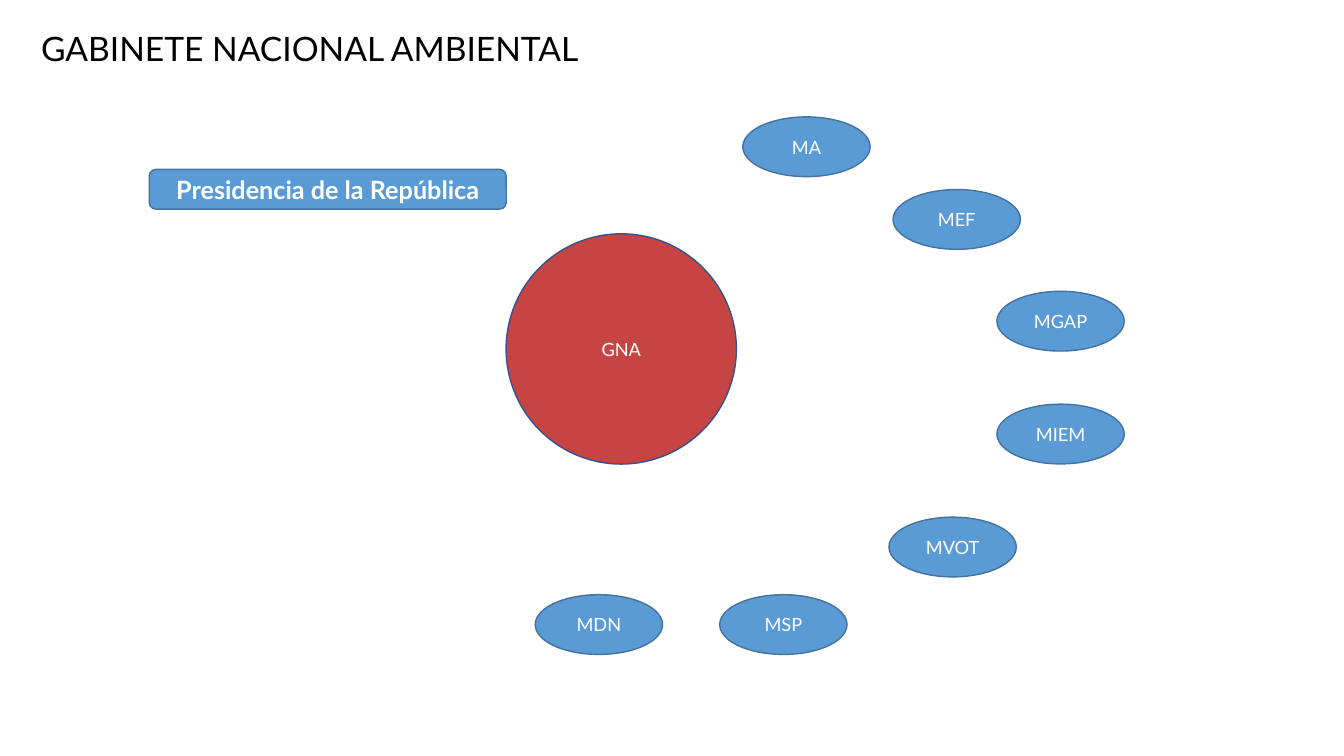
import pptx
import pptx.util
import pptx.dml.color
import pptx.enum.shapes
import pptx.enum.text

Pt = pptx.util.Pt
MSO_SHAPE = pptx.enum.shapes.MSO_SHAPE
PP_ALIGN = pptx.enum.text.PP_ALIGN


def color(target, value):
    target.rgb = pptx.dml.color.RGBColor.from_string(value)


def write(sp, text, size=13, fill="FFFFFF", bold=False, align=PP_ALIGN.CENTER, spacing=1.0):
    tf = sp.text_frame
    tf.word_wrap = True
    tf.vertical_anchor = pptx.enum.text.MSO_ANCHOR.MIDDLE
    p = tf.paragraphs[0]
    p.alignment = align
    p.line_spacing = spacing
    r = p.add_run()
    r.text = text
    r.font.name = "Lato"
    r.font.size = Pt(size)
    r.font.bold = bold
    color(r.font.color, fill)


prs = pptx.Presentation()
prs.slide_width = Pt(960)
prs.slide_height = Pt(540)
s = prs.slides.add_slide(prs.slide_layouts[6])

title = s.shapes.add_textbox(Pt(22.3), Pt(18), Pt(720), Pt(36.7))
write(title, "GABINETE NACIONAL AMBIENTAL", size=24, fill="000000", align=PP_ALIGN.LEFT, spacing=0.9)

ministries = [
    ("MA", 530.6, 83.5),
    ("MEF", 637.9, 135.4),
    ("MGAP", 712.1, 208.1),
    ("MIEM", 712.1, 288.7),
    ("MVOT", 635, 369.4),
    ("MSP", 514.1, 424.8),
    ("MDN", 382.3, 424.8),
]
blue, blue_line = "5B9BD5", "43739E"
nodes = [("GNA", MSO_SHAPE.OVAL, 361.5, 167, 164.5, 164.5, "C64542", "325491", {})]
for name, x, y in ministries:
    nodes.append((name, MSO_SHAPE.OVAL, x, y, 91, 42.7, blue, blue_line, {}))
nodes.append(("Presidencia de la República", MSO_SHAPE.ROUNDED_RECTANGLE,
              106.6, 121, 255, 28.4, blue, blue_line, {"size": 18, "bold": True}))

for text, kind, x, y, w, h, fill, line, style in nodes:
    sp = s.shapes.add_shape(kind, Pt(x), Pt(y), Pt(w), Pt(h))
    sp.shadow.inherit = False
    sp.fill.solid()
    color(sp.fill.fore_color, fill)
    color(sp.line.color, line)
    sp.line.width = Pt(1)
    write(sp, text, **style)

prs.save("out.pptx")
